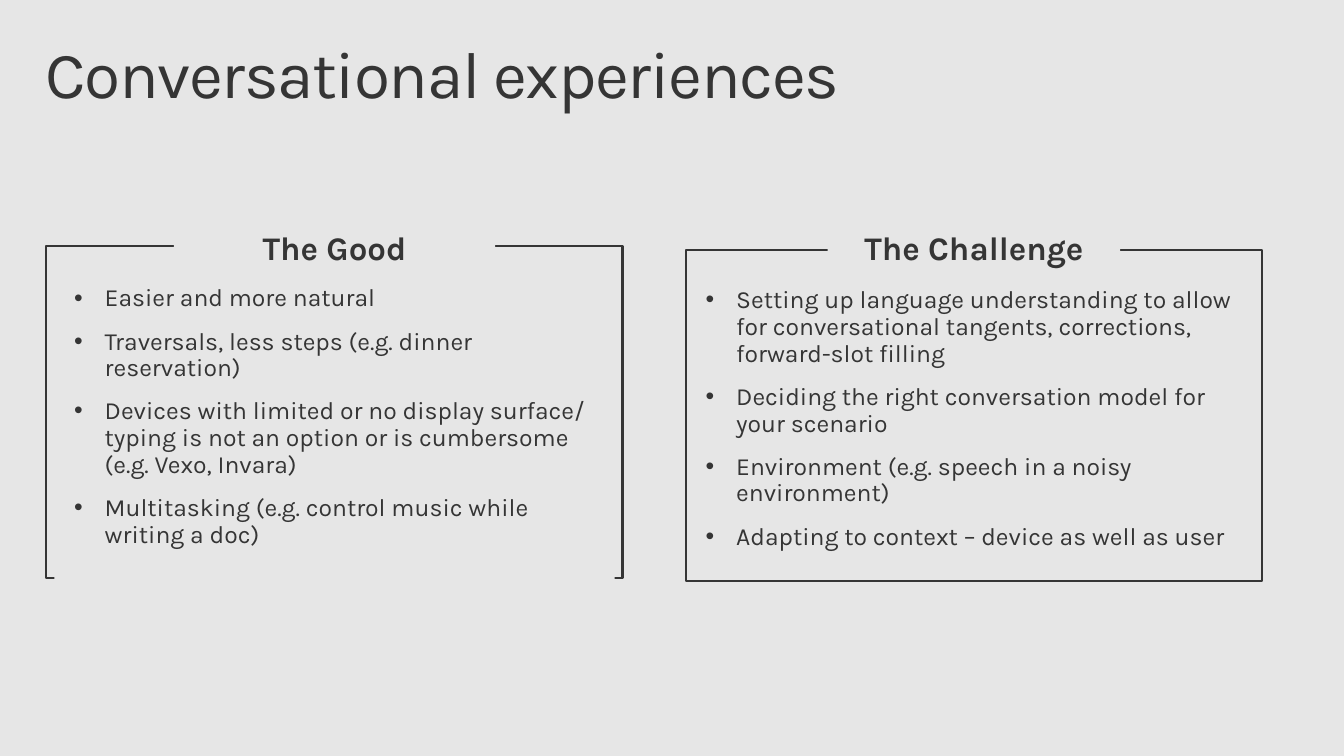
from dataclasses import dataclass

from lxml.etree import SubElement
from pptx import Presentation
from pptx.dml.color import RGBColor
from pptx.enum.shapes import MSO_SHAPE
from pptx.enum.text import MSO_ANCHOR, PP_ALIGN
from pptx.oxml.ns import qn
from pptx.util import Inches, Pt

TITLE = "Conversational experiences"
# Tops, heights and widths in inches; body_inset is the side gap within the frame.
PANELS = [
    dict(heading="The Good", left=0.47, top=2.49, height=3.36, heading_width=3.25,
         body_inset=0.08, body_top=2.73, body_height=3.18, body_filled=True,
         bullets=["Easier and more natural",
                  "Traversals, less steps (e.g. dinner reservation)",
                  "Devices with limited or no display surface/ typing is not an option "
                  "or is cumbersome (e.g. Vexo, Invara)",
                  "Multitasking (e.g. control music while writing a doc)"]),
    dict(heading="The Challenge", left=6.94, top=2.53, height=3.35, heading_width=2.96,
         body_inset=0, body_top=2.75, body_height=3.89, body_filled=False,
         bullets=["Setting up language understanding to allow for conversational tangents, "
                  "corrections, forward-slot filling",
                  "Deciding the right conversation model for your scenario",
                  "Environment (e.g. speech in a noisy environment)",
                  "Adapting to context – device as well as user"]),
]
PANEL_WIDTH = 5.83
HEADING_TOP, HEADING_HEIGHT = 2.3, 0.46
BULLET_INDENT = 0.31


@dataclass(frozen=True)
class Theme:
    font: str = "Karla"
    ink: RGBColor = RGBColor(0x35, 0x35, 0x35)
    paper: RGBColor = RGBColor(0xE6, 0xE6, 0xE6)
    title: int = 48
    heading: int = 24
    body: int = 18
    outline: float = 1.5


THEME = Theme()


def add_box(shapes, left, top, width, height, outlined=False):
    s = shapes.add_shape(MSO_SHAPE.RECTANGLE, *map(Inches, (left, top, width, height)))
    s.shadow.inherit = False
    s.fill.solid()
    s.fill.fore_color.rgb = THEME.paper
    if outlined:
        s.line.color.rgb = THEME.ink
        s.line.width = Pt(THEME.outline)
    else:
        s.line.fill.background()
    return s


def add_bullet(p):
    pPr = p._p.get_or_add_pPr()
    pPr.set("marL", str(Inches(BULLET_INDENT)))
    pPr.set("indent", str(-Inches(BULLET_INDENT)))
    SubElement(pPr, qn("a:buFont"), typeface="Arial")
    SubElement(pPr, qn("a:buChar"), char="•")


def write(s, lines, size, margins=(0.1, 0.05), align=PP_ALIGN.LEFT,
          bold=False, bulleted=False, after=12):
    tf = s.text_frame
    tf.word_wrap = True
    tf.vertical_anchor = MSO_ANCHOR.TOP
    tf.margin_left = tf.margin_right = Inches(margins[0])
    tf.margin_top = tf.margin_bottom = Inches(margins[1])
    tf.text = "\n".join(lines)
    for p in tf.paragraphs:
        p.alignment = align
        p.line_spacing = 0.9
        p.space_after = Pt(after)
        if bulleted:
            add_bullet(p)
        for r in p.runs:
            r.font.name = THEME.font
            r.font.size = Pt(size)
            r.font.bold = bold
            r.font.color.rgb = THEME.ink


def add_panel(slide, panel):
    shapes = slide.shapes.add_group_shape().shapes
    left, inset = panel["left"], panel["body_inset"]
    add_box(shapes, left, panel["top"], PANEL_WIDTH, panel["height"], outlined=True)

    body_area = (left + inset, panel["body_top"],
                 PANEL_WIDTH - 2 * inset, panel["body_height"])
    if panel["body_filled"]:
        body = add_box(shapes, *body_area)
    else:
        body = shapes.add_textbox(*map(Inches, body_area))
    write(body, panel["bullets"], THEME.body, margins=(0.2, 0.16), bulleted=True)

    width = panel["heading_width"]
    heading = add_box(shapes, left + (PANEL_WIDTH - width) / 2, HEADING_TOP,
                      width, HEADING_HEIGHT)
    write(heading, [panel["heading"]], THEME.heading, align=PP_ALIGN.CENTER, bold=True)


def main():
    prs = Presentation()
    prs.slide_width, prs.slide_height = Inches(13.6), Inches(7.65)
    slide = prs.slides.add_slide(prs.slide_layouts[6])
    slide.background.fill.solid()
    slide.background.fill.fore_color.rgb = THEME.paper

    title = slide.shapes.add_textbox(*map(Inches, (0.3, 0.32, 13, 1)))
    write(title, [TITLE], THEME.title, margins=(0.16, 0.1), after=0)
    title.text_frame.paragraphs[0].runs[0].font._element.set("spc", "-100")

    for panel in PANELS:
        add_panel(slide, panel)
    prs.save("out.pptx")


if __name__ == "__main__":
    main()
